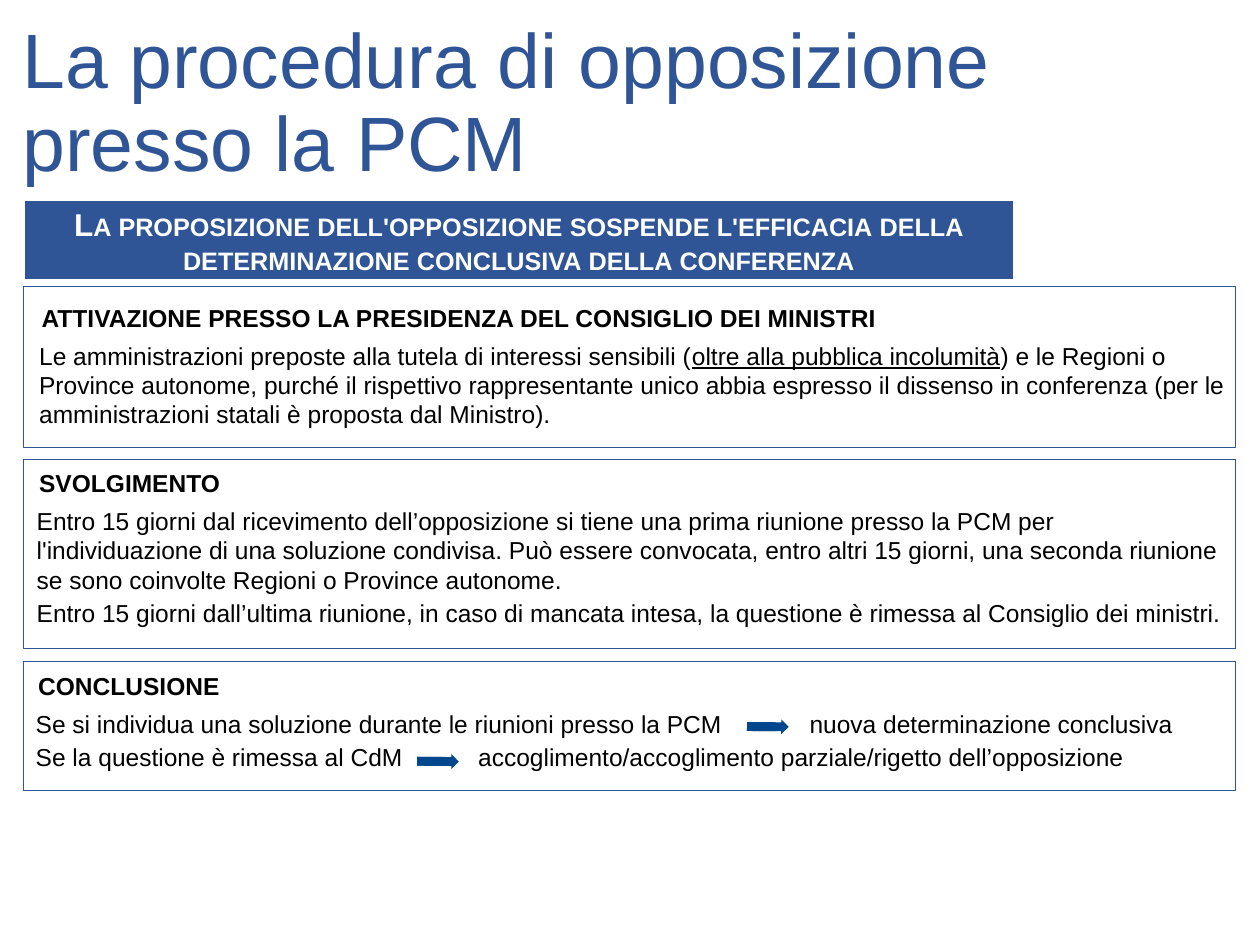
from typing import NamedTuple

from lxml.etree import SubElement
from pptx import Presentation
from pptx.dml.color import RGBColor
from pptx.enum.shapes import MSO_SHAPE as Shape
from pptx.enum.text import MSO_ANCHOR as Anchor, MSO_AUTO_SIZE as AutoSize, PP_ALIGN as Align
from pptx.oxml.ns import qn
from pptx.util import Cm, Pt

BLUE, ARROW_BLUE, WHITE, BLACK = "2F5597", "01478D", "FFFFFF", "000000"
FONT = "Arial"
PANEL_LEFT, PANEL_WIDTH = 0.48, 24.43
TEXT_RIGHT = 24.92


class Box(NamedTuple):
    left: float
    top: float
    width: float
    height: float

    def lengths(self) -> list:
        return [Cm(value) for value in self]


class Phase(NamedTuple):
    """One framed phase; underscores in its lines enclose underlined words."""
    panel_top: float
    panel_height: float
    text_left: float
    text_top: float
    text_height: float
    heading: str
    lines: tuple
    tabs: tuple = ()


PHASES = (
    Phase(5.77, 3.25, -1.4, 5.92, 3.1,
          "ATTIVAZIONE PRESSO LA PRESIDENZA DEL CONSIGLIO DEI MINISTRI",
          ("Le amministrazioni preposte alla tutela di interessi sensibili "
           "(_oltre alla pubblica incolumità_) e le Regioni o Province autonome, "
           "purché il rispettivo rappresentante unico abbia espresso il dissenso in "
           "conferenza (per le amministrazioni statali è proposta dal Ministro).",)),
    Phase(9.27, 3.81, -1.45, 9.25, 4.72, "SVOLGIMENTO",
          ("Entro 15 giorni dal ricevimento dell’opposizione si tiene una prima riunione "
           "presso la PCM per l'individuazione di una soluzione condivisa. Può essere "
           "convocata, entro altri 15 giorni, una seconda riunione se sono coinvolte "
           "Regioni o Province autonome.",
           "Entro 15 giorni dall’ultima riunione, in caso di mancata intesa, la questione "
           "è rimessa al Consiglio dei ministri.")),
    Phase(13.34, 2.59, -1.47, 13.34, 4.72, "CONCLUSIONE",
          ("Se si individua una soluzione durante le riunioni presso la PCM\t"
           "nuova determinazione conclusiva",
           "Se la questione è rimessa al CdM\t"
           "accoglimento/accoglimento parziale/rigetto dell’opposizione"),
          (15.6, 8.92)),
)
ARROWS = ((15.06, 14.5), (8.41, 15.2))


def color(hex_code: str) -> RGBColor:
    return RGBColor.from_string(hex_code)


def style_runs(paragraph, size: float, hex_code: str, bold: bool = False) -> None:
    for run in paragraph.runs:
        run.font.name = FONT
        run.font.size = Pt(size)
        run.font.bold = bold
        run.font.color.rgb = color(hex_code)


def add_filled(shapes, kind, box: Box, fill: str, line: str = "", line_width: float = 0):
    shape = shapes.add_shape(kind, *box.lengths())
    shape.shadow.inherit = False
    shape.fill.solid()
    shape.fill.fore_color.rgb = color(fill)
    if line:
        shape.line.color.rgb = color(line)
        shape.line.width = Pt(line_width)
    else:
        shape.line.fill.background()
    return shape


def set_insets(frame, left: float, top: float, right: float, bottom: float) -> None:
    frame.margin_left, frame.margin_top = Cm(left), Cm(top)
    frame.margin_right, frame.margin_bottom = Cm(right), Cm(bottom)


def add_title(slide) -> None:
    title = slide.shapes.title
    title.left, title.top, title.width, title.height = Box(0.2, 0.28, 21.89, 3.68).lengths()
    frame = title.text_frame
    frame.text = "La procedura di opposizione\vpresso la PCM"
    frame.auto_size = AutoSize.NONE
    frame.vertical_anchor = Anchor.MIDDLE
    heading = frame.paragraphs[0]
    heading.alignment = Align.LEFT
    heading.line_spacing = 0.9
    style_runs(heading, 44, BLUE)


def add_banner(slide) -> None:
    banner = add_filled(slide.shapes, Shape.RECTANGLE, Box(0.48, 4.04, 19.96, 1.6), BLUE, WHITE, 1)
    frame = banner.text_frame
    frame.word_wrap = True
    frame.vertical_anchor = Anchor.MIDDLE
    set_insets(frame, 0.15, 0.15, 0.15, 0)
    frame.text = ("La proposizione dell'opposizione sospende l'efficacia della "
                  "determinazione conclusiva della conferenza")
    notice = frame.paragraphs[0]
    notice.alignment = Align.CENTER
    notice.line_spacing = 0.9
    notice.space_after = Pt(4.5)
    style_runs(notice, 18, WHITE, bold=True)
    for run in notice.runs:
        run.font._element.set("cap", "small")


def add_tab_stop(paragraph, position: float) -> None:
    tabs = SubElement(paragraph._p.get_or_add_pPr(), qn("a:tabLst"))
    SubElement(tabs, qn("a:tab"), pos=str(Cm(position)), algn="l")


def add_phase(slide, phase: Phase) -> None:
    add_filled(slide.shapes, Shape.RECTANGLE,
               Box(PANEL_LEFT, phase.panel_top, PANEL_WIDTH, phase.panel_height),
               WHITE, BLUE, 0.5)
    text_box = Box(phase.text_left, phase.text_top, TEXT_RIGHT - phase.text_left, phase.text_height)
    frame = slide.shapes.add_textbox(*text_box.lengths()).text_frame
    frame.word_wrap = True
    set_insets(frame, 2.19, 0.18, 0.18, 0.18)
    frame.text = phase.heading
    heading = frame.paragraphs[0]
    heading._p.get_or_add_pPr().set("marL", str(Cm(0.05)))
    heading.space_after = Pt(4.9)
    style_runs(heading, 14, BLACK, bold=True)
    for index, line in enumerate(phase.lines):
        paragraph = frame.add_paragraph()
        if phase.tabs:
            add_tab_stop(paragraph, phase.tabs[index])
        paragraph.space_after = Pt(2.1)
        for part, words in enumerate(line.split("_")):
            run = paragraph.add_run()
            run.text = words
            if part % 2:
                run.font.underline = True
        style_runs(paragraph, 14, BLACK)


def add_arrow(slide, left: float, top: float) -> None:
    group = slide.shapes.add_group_shape()
    head = add_filled(group.shapes, Shape.RIGHT_ARROW, Box(left, top, 0.84, 0.3), ARROW_BLUE)
    head.adjustments[0] = 0.6
    shaft = add_filled(group.shapes, Shape.RECTANGLE, Box(left, top + 0.06, 0.58, 0.18), ARROW_BLUE)
    head.rotation = shaft.rotation = 0.5


def main() -> None:
    deck = Presentation()
    deck.slide_width, deck.slide_height = Cm(25.4), Cm(19.05)
    slide = deck.slides.add_slide(deck.slide_layouts[5])
    add_title(slide)
    add_banner(slide)
    for phase in PHASES:
        add_phase(slide, phase)
    for left, top in ARROWS:
        add_arrow(slide, left, top)
    deck.save("out.pptx")


if __name__ == "__main__":
    main()
